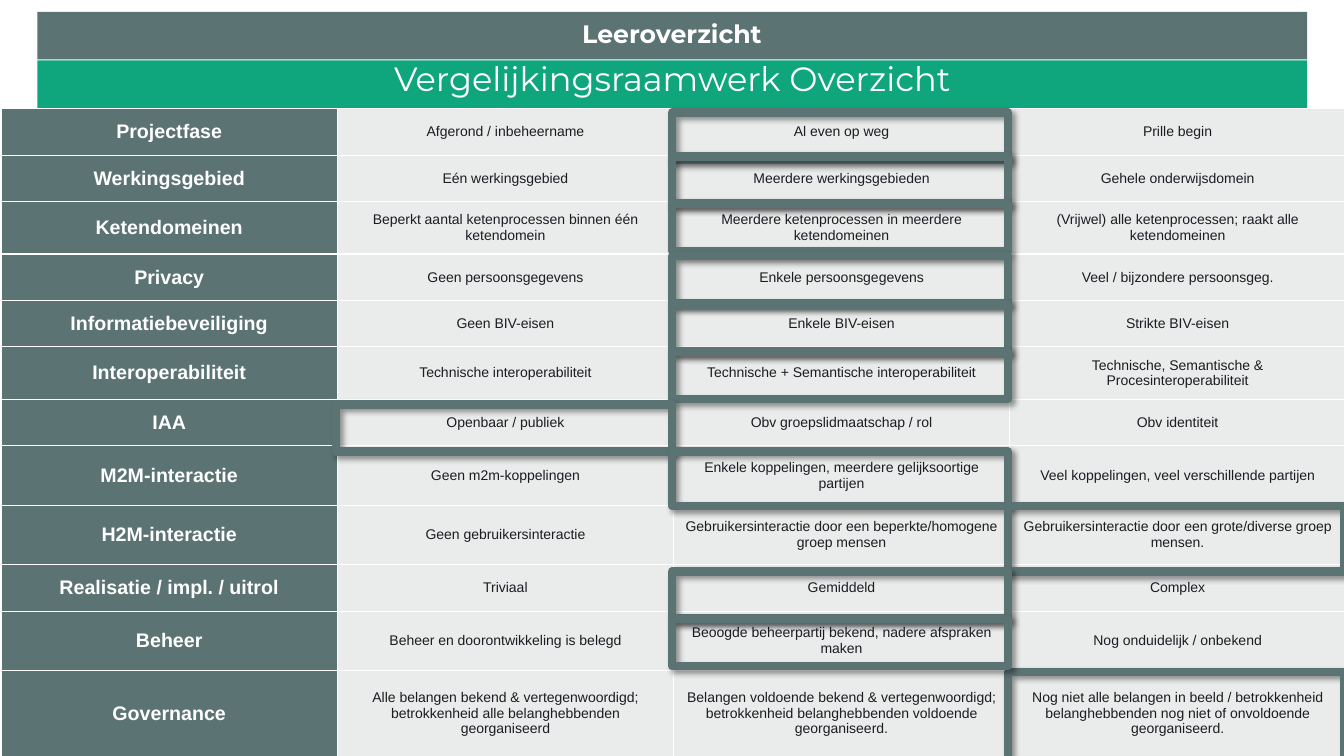
"""Build the slide with the comparison framework table and its highlighted choices."""
from lxml.etree import SubElement
from pptx import Presentation
from pptx.dml.color import RGBColor
from pptx.enum.shapes import MSO_SHAPE as Shape
from pptx.enum.text import MSO_ANCHOR as Anchor, MSO_AUTO_SIZE as AutoSize, PP_ALIGN as Align
from pptx.oxml import parse_xml
from pptx.oxml.ns import nsdecls, qn
from pptx.util import Cm, Pt

SLATE, GREEN, PALE, INK, WHITE = "5C7373", "0FA67E", "EAEBEB", "1C1C22", "FFFFFF"
COLUMN_WIDTH, TABLE_LEFT, TABLE_TOP = 8.47, 0.03, 2.74
LOW, MID, TALL, LAST = 1.17, 1.32, 1.5, 2.16

ROWS = [
    (LOW, "Projectfase", "Afgerond / inbeheername", "Al even op weg", "Prille begin"),
    (LOW, "Werkingsgebied", "Eén werkingsgebied", "Meerdere werkingsgebieden", "Gehele onderwijsdomein"),
    (MID, "Ketendomeinen", "Beperkt aantal ketenprocessen binnen één ketendomein",
     "Meerdere ketenprocessen in meerdere ketendomeinen",
     "(Vrijwel) alle ketenprocessen; raakt alle ketendomeinen"),
    (LOW, "Privacy", "Geen persoonsgegevens", "Enkele persoonsgegevens", "Veel / bijzondere persoonsgeg."),
    (LOW, "Informatiebeveiliging", "Geen BIV-eisen", "Enkele BIV-eisen", "Strikte BIV-eisen"),
    (MID, "Interoperabiliteit", "Technische interoperabiliteit",
     "Technische + Semantische interoperabiliteit",
     "Technische, Semantische & Procesinteroperabiliteit"),
    (LOW, "IAA", "Openbaar / publiek", "Obv groepslidmaatschap / rol", "Obv identiteit"),
    (TALL, "M2M-interactie", "Geen m2m-koppelingen",
     "Enkele koppelingen, meerdere gelijksoortige partijen",
     "Veel koppelingen, veel verschillende partijen"),
    (TALL, "H2M-interactie", "Geen gebruikersinteractie",
     "Gebruikersinteractie door een beperkte/homogene groep mensen",
     "Gebruikersinteractie door een grote/diverse groep mensen."),
    (LOW, "Realisatie / impl. / uitrol", "Triviaal", "Gemiddeld", "Complex"),
    (TALL, "Beheer", "Beheer en doorontwikkeling is belegd",
     "Beoogde beheerpartij bekend, nadere afspraken maken", "Nog onduidelijk / onbekend"),
    (LAST, "Governance",
     "Alle belangen bekend & vertegenwoordigd; betrokkenheid alle belanghebbenden georganiseerd",
     "Belangen voldoende bekend & vertegenwoordigd; betrokkenheid belanghebbenden voldoende georganiseerd.",
     "Nog niet alle belangen in beeld / betrokkenheid belanghebbenden nog niet of onvoldoende georganiseerd."),
]

# column, top, height
CHOICES = [
    (2, 2.84, 1.19), (2, 3.94, 1.19), (2, 5.13, 1.19), (2, 6.45, 1.19),
    (2, 7.67, 1.19), (2, 8.86, 1.19), (1, 10.19, 1.19), (2, 11.38, 1.37),
    (3, 12.75, 1.65), (2, 14.4, 1.19), (3, 16.94, 2.24), (2, 15.6, 1.19),
]


def rgb(value):
    """Turn a hex string into a colour."""
    return RGBColor.from_string(value)


def fill(target, color):
    """Give a shape or cell a solid fill."""
    target.fill.solid()
    target.fill.fore_color.rgb = rgb(color)


def write(frame, text, size=10, color=INK, bold=False, font="Arial"):
    """Write one centred paragraph in a text frame."""
    para = frame.paragraphs[0]
    para.alignment = Align.CENTER
    span = para.add_run()
    span.text = text
    span.font.size, span.font.bold, span.font.name = Pt(size), bold, font
    span.font.color.rgb = rgb(color)


def place(shape, left, top, width, height):
    """Set the position and size of a shape in centimetres."""
    shape.left, shape.top, shape.width, shape.height = map(Cm, (left, top, width, height))


def set_margins(target):
    """Give a text frame or cell equal margins."""
    target.margin_left = target.margin_right = target.margin_top = target.margin_bottom = Cm(0.25)


def add_borders(cell):
    """Draw thin white lines around a cell."""
    for side in ("lnL", "lnR", "lnT", "lnB"):
        cell._tc.get_or_add_tcPr().append(parse_xml(
            f'<a:{side} {nsdecls("a")} w="12700"><a:solidFill>'
            f'<a:srgbClr val="{WHITE}"/></a:solidFill></a:{side}>'))


def add_headings(page):
    """Add the two heading bars and their text."""
    bar = page.shapes.add_shape(Shape.RECTANGLE, Cm(0.94), Cm(0.3), Cm(32), Cm(1.2))
    bar.shadow.inherit = False
    bar.line.fill.background()
    fill(bar, SLATE)
    title = page.shapes.title
    place(title, 0.94, 1.52, 32, 1.2)
    fill(title, GREEN)
    box = page.shapes.add_textbox(Cm(1.3), Cm(0.18), Cm(31.27), Cm(1.35))
    for shape, anchor, text, size, bold in (
            (title, Anchor.BOTTOM, "Vergelijkingsraamwerk Overzicht", 24, False),
            (box, Anchor.MIDDLE, "Leeroverzicht", 18, True)):
        frame = shape.text_frame
        frame.word_wrap, frame.auto_size, frame.vertical_anchor = True, AutoSize.NONE, anchor
        set_margins(frame)
        write(frame, text, size=size, color=WHITE, bold=bold, font="Montserrat")


def add_framework(page):
    """Add the comparison table."""
    height = sum(row[0] for row in ROWS)
    table = page.shapes.add_table(len(ROWS), 4, Cm(TABLE_LEFT), Cm(TABLE_TOP),
                                  Cm(4 * COLUMN_WIDTH), Cm(height)).table
    for column in table.columns:
        column.width = Cm(COLUMN_WIDTH)
    for row, (row_height, *texts) in zip(table.rows, ROWS):
        row.height = Cm(row_height)
        for index, (cell, text) in enumerate(zip(row.cells, texts)):
            cell.vertical_anchor = Anchor.MIDDLE
            set_margins(cell)
            add_borders(cell)
            if index == 0:
                fill(cell, SLATE)
                write(cell.text_frame, text, size=14, color=WHITE, bold=True)
            else:
                fill(cell, PALE)
                write(cell.text_frame, text)


def add_choice(page, column, top, height):
    """Frame the chosen cell with a thick line and a soft shadow."""
    choice = page.shapes.add_shape(Shape.RECTANGLE, Cm(column * COLUMN_WIDTH), Cm(top),
                                   Cm(COLUMN_WIDTH), Cm(height))
    choice.fill.background()
    choice.line.color.rgb = rgb(SLATE)
    choice.line.width = Pt(6)
    choice.shadow.inherit = False
    effects = choice._element.spPr.find(qn("a:effectLst"))
    shadow = SubElement(effects, qn("a:outerShdw"), blurRad=str(Pt(4)), dist=str(Pt(3)),
                        dir="2700000", algn="tl", rotWithShape="0")
    tint = SubElement(shadow, qn("a:srgbClr"), val="000000")
    SubElement(tint, qn("a:alpha"), val="40000")


def main():
    """Build and save the deck."""
    deck = Presentation()
    deck.slide_width, deck.slide_height = Cm(33.87), Cm(19.05)
    page = deck.slides.add_slide(deck.slide_layouts[5])
    add_headings(page)
    add_framework(page)
    for choice in CHOICES:
        add_choice(page, *choice)
    deck.save("out.pptx")


if __name__ == "__main__":
    main()
